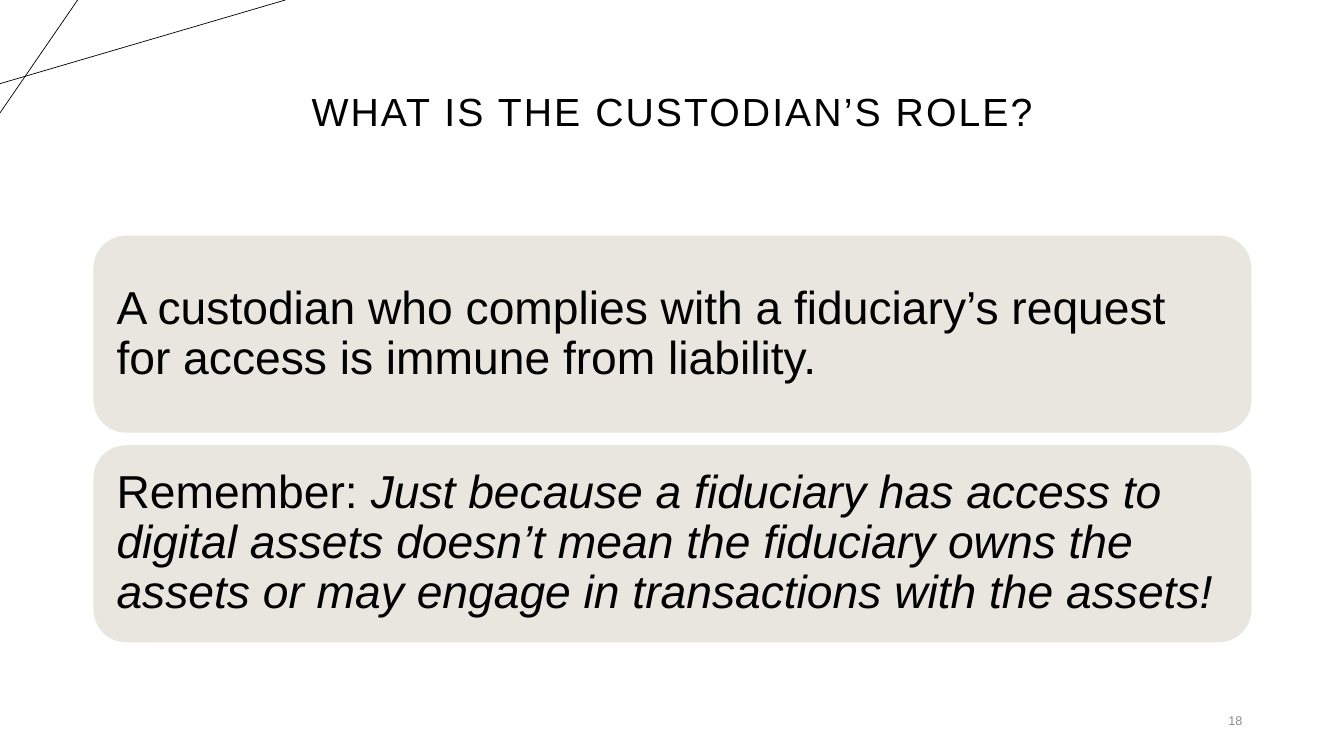
from lxml.etree import SubElement
from pptx import Presentation
from pptx.dml.color import RGBColor
from pptx.enum.shapes import MSO_CONNECTOR, MSO_SHAPE
from pptx.enum.text import MSO_ANCHOR, PP_ALIGN
from pptx.oxml.ns import qn
from pptx.util import Inches, Pt


def color(hex_value):
    return RGBColor.from_string(hex_value)


def style_text(frame, size, hex_value, align):
    frame.word_wrap = True
    frame.vertical_anchor = MSO_ANCHOR.MIDDLE
    paragraph = frame.paragraphs[0]
    paragraph.alignment = align
    for run in paragraph.runs:
        run.font.name = "Arial"
        run.font.size = Pt(size)
        run.font.color.rgb = color(hex_value)
    return paragraph


prs = Presentation()
prs.slide_width = Inches(13.33)
prs.slide_height = Inches(7.5)
slide = prs.slides.add_slide(prs.slide_layouts[6])

for x1, y1, x2, y2 in [(0, 0.83, 2.83, 0), (0.77, 0, 0, 1.12)]:
    corner_line = slide.shapes.add_connector(
        MSO_CONNECTOR.STRAIGHT, Inches(x1), Inches(y1), Inches(x2), Inches(y2))
    corner_line.line.color.rgb = color("000000")
    corner_line.line.width = Pt(0.5)
    SubElement(corner_line._element.spPr, qn("a:effectLst"))

title = slide.shapes.add_textbox(Inches(0.92), Inches(0.4), Inches(11.5), Inches(1.45))
title.text_frame.text = "WHAT IS THE CUSTODIAN’S ROLE?"
heading = style_text(title.text_frame, 28, "000000", PP_ALIGN.CENTER)
heading.line_spacing = 0.9
heading.runs[0].font._element.set("spc", "150")

page_number = slide.shapes.add_textbox(Inches(9.42), Inches(6.95), Inches(3), Inches(0.4))
page_number.text_frame.text = "18"
style_text(page_number.text_frame, 9, "8C8C8C", PP_ALIGN.RIGHT)

statements = [
    [("A custodian who complies with a fiduciary’s request for access is immune from liability.", False)],
    [("Remember: ", False),
     ("Just because a fiduciary has access to digital assets doesn’t mean the fiduciary owns "
      "the assets or may engage in transactions with the assets!", True)],
]
for row, statement in enumerate(statements):
    panel = slide.shapes.add_shape(
        MSO_SHAPE.ROUNDED_RECTANGLE,
        Inches(0.92), Inches(2.33 + row * 2.08), Inches(11.5), Inches(1.97))
    panel.shadow.inherit = False
    panel.fill.solid()
    panel.fill.fore_color.rgb = color("E9E6DF")
    panel.line.color.rgb = color("FFFFFF")
    panel.line.width = Pt(1)
    frame = panel.text_frame
    frame.margin_left = frame.margin_right = Inches(0.14)
    frame.margin_top = frame.margin_bottom = Inches(0.14)
    for words, italic in statement:
        run = frame.paragraphs[0].add_run()
        run.text = words
        run.font.italic = italic
    style_text(frame, 33, "000000", PP_ALIGN.LEFT).line_spacing = 0.9

prs.save("out.pptx")
